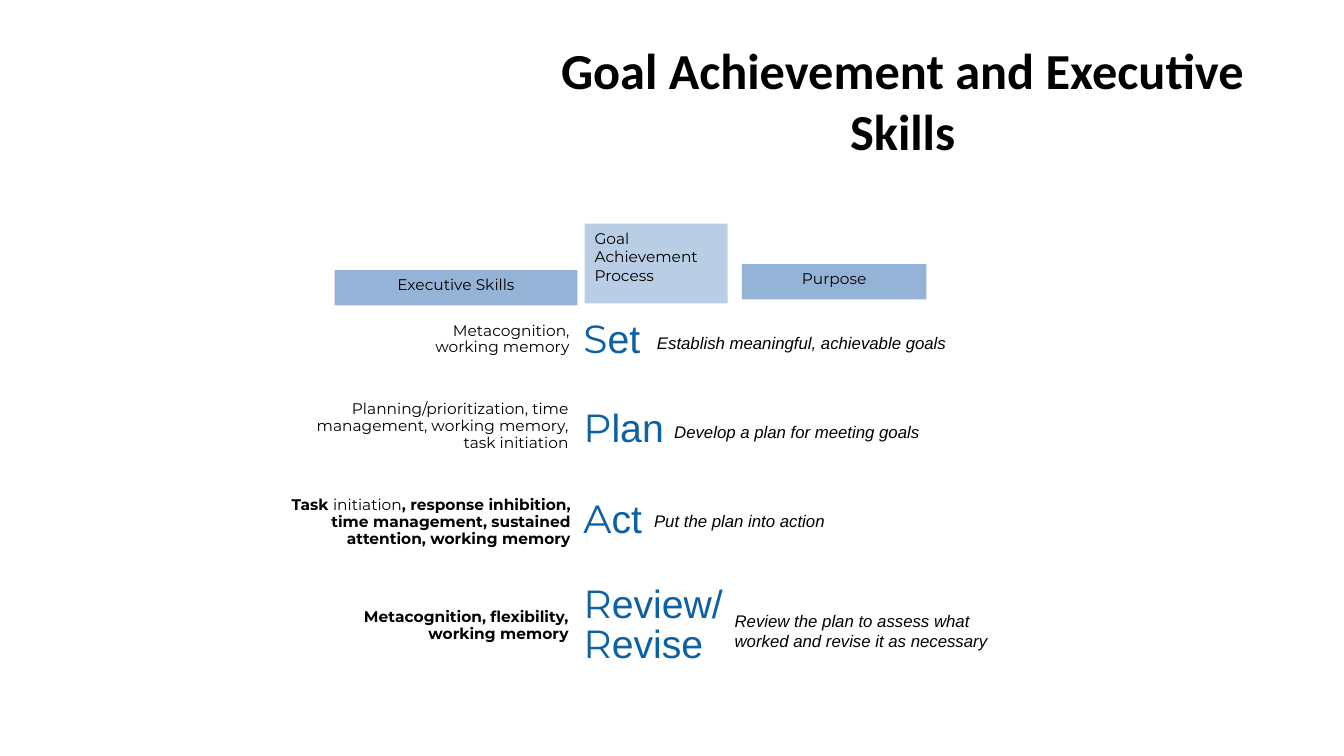
from dataclasses import dataclass

from pptx import Presentation
from pptx.dml.color import RGBColor
from pptx.enum.shapes import MSO_SHAPE as Shape
from pptx.enum.text import MSO_ANCHOR as Anchor, MSO_AUTO_SIZE as AutoSize, PP_ALIGN as Align
from pptx.util import Pt


@dataclass(frozen=True)
class Theme:
    ink: str = "000000"
    verb: str = "0C61A4"
    side_header: str = "95B3D7"
    middle_header: str = "B9CDE5"
    heading_font: str = "Calibri"
    label_font: str = "Montserrat"
    body_font: str = "Arial"
    title_size: int = 36
    verb_size: int = 28
    purpose_size: int = 12
    label_size: int = 11
    skill_spacing: int = 12


THEME = Theme()

HEADERS = [
    ("Executive Skills", (239, 193, 173.5, 25.2), THEME.side_header, Align.CENTER),
    ("Goal Achievement Process", (417.6, 159.8, 102.2, 56.9), THEME.middle_header, Align.LEFT),
    ("Purpose", (530, 188.6, 131.8, 25.2), THEME.side_header, Align.CENTER),
]

STEPS = [
    (["Set"], (409.7, 221, 273.6, 49.7),
     [("Metacognition, working memory", False)], (281.5, 226.8, 132.5, 38.2),
     "Establish meaningful, achievable goals", (462.2, 234, 331.2, 26.6)),
    (["Plan"], (409.7, 284.4, 273.6, 49.7),
     [("Planning/prioritization, time management, working memory, task initiation", False)],
     (216.7, 283, 196.6, 52.6),
     "Develop a plan for meeting goals", (474.5, 297.4, 355.7, 26.6)),
    (["Act"], (409.7, 349.2, 273.6, 49.7),
     [("Task ", True), ("initiation", False),
      (", response inhibition, time management, sustained attention, working memory", True)],
     (171.4, 351.4, 243.4, 52.6),
     "Put the plan into action", (460.1, 361.4, 174.2, 26.6)),
    (["Review/", "Revise"], (409.7, 416.2, 118.8, 77),
     [("Metacognition, flexibility, working memory", True)], (232.6, 431.3, 180.7, 38.2),
     "Review the plan to assess what worked and revise it as necessary",
     (517.7, 432.7, 196.6, 43.9)),
]


def add_span(para, text, *, font, size, color=THEME.ink, bold=False, italic=False):
    span = para.add_run()
    span.text = text
    span.font.name = font
    span.font.size = Pt(size)
    span.font.bold = bold
    span.font.italic = italic
    span.font.color.rgb = RGBColor.from_string(color)


def place(area):
    return [Pt(length) for length in area]


def prepare_para(box, align=Align.LEFT, spacing=None):
    frame = box.text_frame
    frame.word_wrap = True
    frame.auto_size = AutoSize.SHAPE_TO_FIT_TEXT
    frame.vertical_anchor = Anchor.TOP
    para = frame.paragraphs[0]
    para.alignment = align
    if spacing:
        para.line_spacing = Pt(spacing)
    return para


def add_title(page, text):
    title = page.shapes.title
    title.left, title.top, title.width, title.height = place((377.3, 21.6, 535, 99.4))
    title.text_frame.vertical_anchor = Anchor.MIDDLE
    para = title.text_frame.paragraphs[0]
    para.alignment = Align.CENTER
    add_span(para, text, font=THEME.heading_font, size=THEME.title_size, bold=True)


def add_header(page, text, area, fill, align):
    box = page.shapes.add_shape(Shape.RECTANGLE, *place(area))
    box.shadow.inherit = False
    box.fill.solid()
    box.fill.fore_color.rgb = RGBColor.from_string(fill)
    box.line.fill.background()
    add_span(prepare_para(box, align), text, font=THEME.label_font, size=THEME.label_size)


def add_verb(page, words, area):
    spacing = THEME.verb_size if len(words) > 1 else None
    para = prepare_para(page.shapes.add_textbox(*place(area)), spacing=spacing)
    for index, word in enumerate(words):
        if index:
            para.add_line_break()
        for text, font in ((word[0], THEME.label_font), (word[1:], THEME.body_font)):
            add_span(para, text, font=font, size=THEME.verb_size, color=THEME.verb)


def add_skills(page, skills, area):
    box = page.shapes.add_textbox(*place(area))
    para = prepare_para(box, Align.RIGHT, THEME.skill_spacing)
    for text, bold in skills:
        add_span(para, text, font=THEME.label_font, size=THEME.label_size, bold=bold)


def add_purpose(page, text, area):
    para = prepare_para(page.shapes.add_textbox(*place(area)))
    add_span(para, text, font=THEME.body_font, size=THEME.purpose_size, italic=True)


def main():
    deck = Presentation()
    deck.slide_width, deck.slide_height = Pt(960), Pt(540)
    page = deck.slides.add_slide(deck.slide_layouts[5])
    add_title(page, "Goal Achievement and Executive Skills")
    for words, verb_area, skills, skills_area, purpose, purpose_area in STEPS:
        add_verb(page, words, verb_area)
        add_purpose(page, purpose, purpose_area)
        add_skills(page, skills, skills_area)
    for header in HEADERS:
        add_header(page, *header)
    deck.save("out.pptx")


if __name__ == "__main__":
    main()
